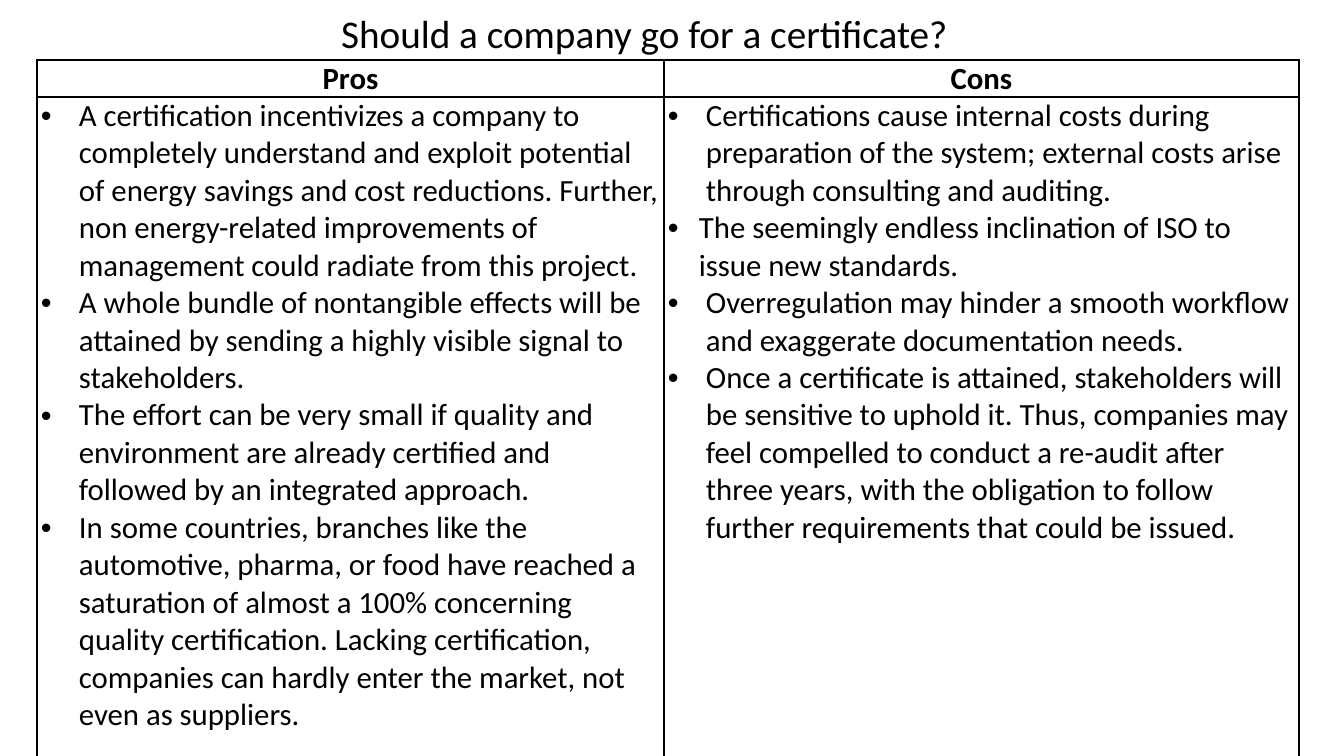
"""Build a slide weighing the pros and cons of a certificate."""
import pptx
import pptx.util
import pptx.dml.color
import pptx.enum.text
import pptx.oxml
import pptx.oxml.ns

TITLE = "Should a company go for a certificate?"
WIDE, NARROW = 38, 31
COLUMNS = [
    ("Pros", 627, [
        (WIDE, "A certification incentivizes a company to completely understand and exploit potential of energy savings and cost reductions. Further, non energy-related improvements of management could radiate from this project."),
        (WIDE, "A whole bundle of nontangible effects will be attained by sending a highly visible signal to stakeholders."),
        (WIDE, "The effort can be very small if quality and environment are already certified and followed by an integrated approach."),
        (WIDE, "In some countries, branches like the automotive, pharma, or food have reached a saturation of almost a 100% concerning quality certification. Lacking certification, companies can hardly enter the market, not even as suppliers."),
    ]),
    ("Cons", 635, [
        (WIDE, "Certifications cause internal costs during preparation of the system; external costs arise through consulting and auditing."),
        (NARROW, "The seemingly endless inclination of ISO to issue new standards."),
        (WIDE, "Overregulation may hinder a smooth workflow and exaggerate documentation needs."),
        (WIDE, "Once a certificate is attained, stakeholders will be sensitive to uphold it. Thus, companies may feel compelled to conduct a re-audit after three years, with the obligation to follow further requirements that could be issued."),
    ]),
]
ROW_HEIGHTS = [37, 674]
COLORS = {"ink": "000000", "paper": "FFFFFF"}
TITLE_BOX = (331, 4, 643, 57)
TABLE_CORNER = (37, 60)
CELL_PADDING = 4
TITLE_FONT = {"name": "Calibri", "size": pptx.util.Pt(28), "bold": False}
HEAD_FONT = {"name": "Calibri", "size": pptx.util.Pt(22), "bold": True}
BODY_FONT = HEAD_FONT | {"bold": False}


def px(length):
    return pptx.util.Emu(round(length * 914400 / 100.8))


def color(name):
    return pptx.dml.color.RGBColor.from_string(COLORS[name])


def apply(target, values):
    for name, value in values.items():
        setattr(target, name, value)


def write(para, text, font, align):
    para.alignment = align
    span = para.add_run()
    span.text = text
    apply(span.font, font)
    span.font.color.rgb = color("ink")


def add_bullet(para, indent):
    props = para._p.get_or_add_pPr()
    props.set("marL", str(px(indent)))
    props.set("indent", str(-px(indent)))
    props.append(pptx.oxml.parse_xml(
        f'<a:buFont {pptx.oxml.ns.nsdecls("a")} typeface="Arial"/>'))
    props.append(pptx.oxml.parse_xml(
        f'<a:buChar {pptx.oxml.ns.nsdecls("a")} char="•"/>'))


def format_cell(cell):
    apply(cell, {"margin_left": px(CELL_PADDING), "margin_right": px(CELL_PADDING),
                 "margin_top": 0, "margin_bottom": 0})
    cell.fill.solid()
    cell.fill.fore_color.rgb = color("paper")
    props = cell._tc.get_or_add_tcPr()
    for place, side in enumerate("LRTB"):
        props.insert(place, pptx.oxml.parse_xml(
            f'<a:ln{side} {pptx.oxml.ns.nsdecls("a")} w="12700"><a:solidFill>'
            f'<a:srgbClr val="{COLORS["ink"]}"/></a:solidFill></a:ln{side}>'))


def main():
    align = pptx.enum.text.PP_ALIGN
    deck = pptx.Presentation()
    apply(deck, {"slide_width": px(1344), "slide_height": px(756)})
    page = deck.slides.add_slide(deck.slide_layouts[5])

    title = page.shapes.title
    apply(title, dict(zip(("left", "top", "width", "height"), map(px, TITLE_BOX))))
    apply(title.text_frame, {
        "word_wrap": True,
        "auto_size": pptx.enum.text.MSO_AUTO_SIZE.SHAPE_TO_FIT_TEXT,
        "vertical_anchor": pptx.enum.text.MSO_ANCHOR.TOP})
    write(title.text_frame.paragraphs[0], TITLE, TITLE_FONT, align.LEFT)

    widths = [width for _, width, _ in COLUMNS]
    table = page.shapes.add_table(
        len(ROW_HEIGHTS), len(COLUMNS), *map(px, TABLE_CORNER),
        px(sum(widths)), px(sum(ROW_HEIGHTS))).table
    apply(table, {"first_row": False, "horz_banding": False})
    for row, height in zip(table.rows, ROW_HEIGHTS):
        row.height = px(height)
    for index, (heading, width, points) in enumerate(COLUMNS):
        table.columns[index].width = px(width)
        head, body = table.cell(0, index), table.cell(1, index)
        format_cell(head)
        format_cell(body)
        write(head.text_frame.paragraphs[0], heading, HEAD_FONT, align.CENTER)
        for number, (indent, text) in enumerate(points):
            frame = body.text_frame
            para = frame.add_paragraph() if number else frame.paragraphs[0]
            write(para, text, BODY_FONT, align.LEFT)
            add_bullet(para, indent)

    deck.save("out.pptx")


if __name__ == "__main__":
    main()
